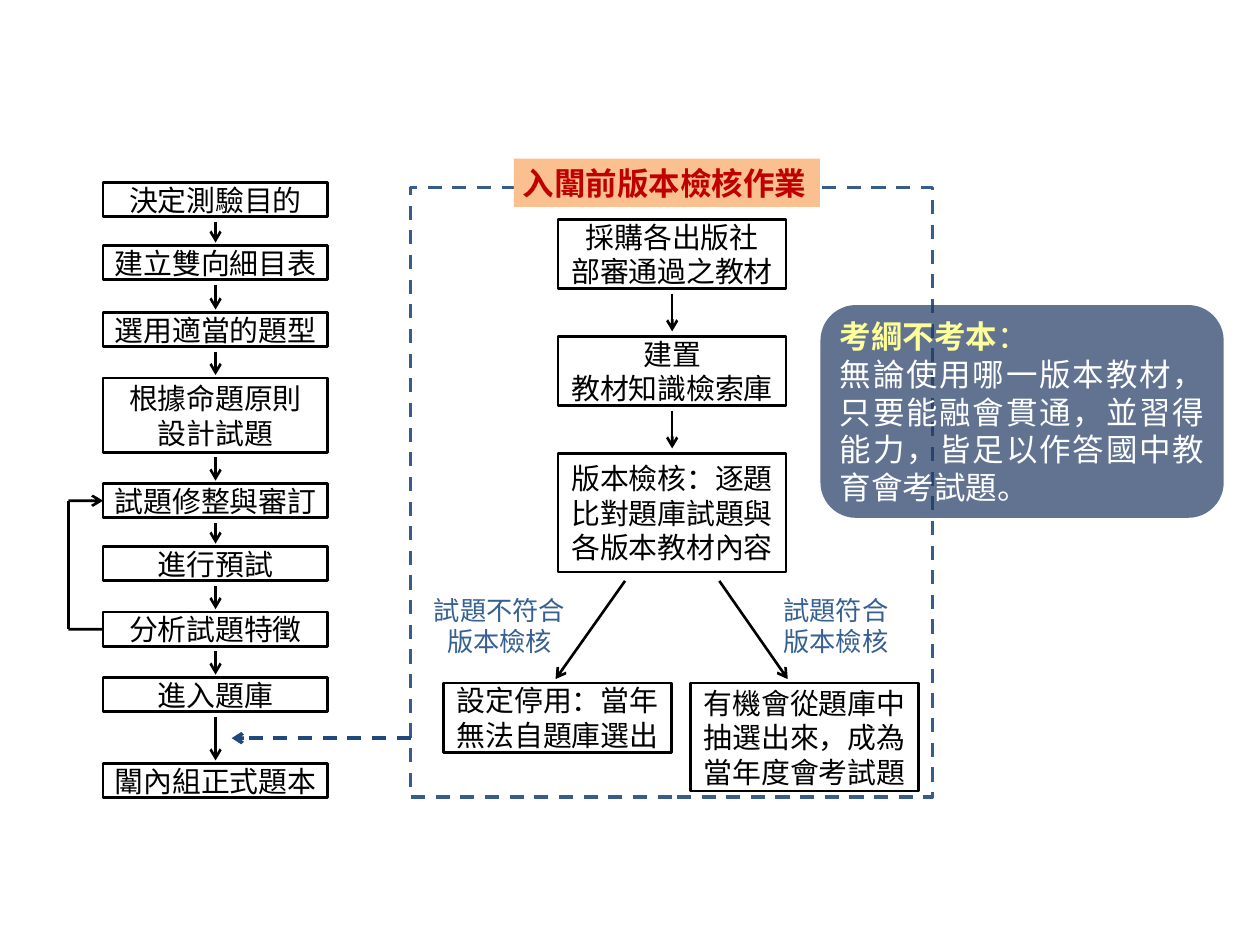
from lxml import etree
from pptx import Presentation
from pptx.dml.color import RGBColor
from pptx.enum.dml import MSO_LINE
from pptx.enum.shapes import MSO_CONNECTOR, MSO_SHAPE
from pptx.enum.text import MSO_ANCHOR, PP_ALIGN
from pptx.oxml.ns import qn
from pptx.util import Cm, Pt

FONT = "Noto Sans CJK SC"
BLACK = RGBColor(0x00, 0x00, 0x00)
WHITE = RGBColor(0xFF, 0xFF, 0xFF)
LABEL_BLUE = RGBColor(0x37, 0x60, 0x92)
FRAME_BLUE = RGBColor(0x38, 0x5D, 0x8A)
LINK_BLUE = RGBColor(0x1F, 0x49, 0x7D)
NAVY = RGBColor(0x20, 0x38, 0x64)
ORANGE = RGBColor(0xFA, 0xC0, 0x90)
RED = RGBColor(0xC0, 0x00, 0x00)
YELLOW = RGBColor(0xFF, 0xFF, 0x99)

RECTANGLE, ROUNDED = MSO_SHAPE.RECTANGLE, MSO_SHAPE.ROUNDED_RECTANGLE
STRAIGHT, DASH = MSO_CONNECTOR.STRAIGHT, MSO_LINE.DASH
MIDDLE = MSO_ANCHOR.MIDDLE
LEFT, CENTER, JUSTIFY = PP_ALIGN.LEFT, PP_ALIGN.CENTER, PP_ALIGN.JUSTIFY
LEFT_SIDE = 1

STEP_HEIGHT = 0.69
STEPS = [  # top within the column, height, lines
    (0, STEP_HEIGHT, ["決定測驗目的"]),
    (1.27, STEP_HEIGHT, ["建立雙向細目表"]),
    (2.62, STEP_HEIGHT, ["選用適當的題型"]),
    (3.94, 1.5, ["根據命題原則", "設計試題"]),
    (6.07, STEP_HEIGHT, ["試題修整與審訂"]),
    (7.34, STEP_HEIGHT, ["進行預試"]),
    (8.66, STEP_HEIGHT, ["分析試題特徵"]),
    (9.98, STEP_HEIGHT, ["進入題庫"]),
    (11.71, STEP_HEIGHT, ["闈內組正式題本"]),
]
REVISION, ANALYSIS = 4, 6  # steps joined by the feedback loop


def set_font(paragraph, size, color, bold=False):
    font = paragraph.font
    font.name, font.size, font.bold = FONT, Pt(size), bold
    font.color.rgb = color
    properties = paragraph._p.get_or_add_pPr().get_or_add_defRPr()
    etree.SubElement(properties, qn("a:ea"), typeface=FONT)


def write(shape, lines, size, color, align=CENTER, bold=False):
    frame = shape.text_frame
    frame.word_wrap = True
    frame.vertical_anchor = MIDDLE
    frame.margin_left = frame.margin_right = Cm(0.18)
    frame.margin_top = frame.margin_bottom = Cm(0.1)
    frame.text = "\n".join(lines)
    for paragraph in frame.paragraphs:
        paragraph.alignment = align
        set_font(paragraph, size, color, bold)
    return frame


def add_panel(shapes, kind, left, top, width, height, fill=None):
    panel = shapes.add_shape(kind, Cm(left), Cm(top), Cm(width), Cm(height))
    panel.shadow.inherit = False
    panel.line.fill.background()
    if fill is None:
        panel.fill.background()
    else:
        panel.fill.solid()
        panel.fill.fore_color.rgb = fill
    return panel


def add_step(shapes, left, top, width, height, lines):
    step = add_panel(shapes, RECTANGLE, left, top, width, height)
    step.line.color.rgb = BLACK
    step.line.width = Pt(1.5)
    write(step, lines, 16.5, BLACK)
    return step


def add_line(shapes, x1, y1, x2, y2, arrow=True, color=BLACK, width=1.5, dash=None):
    line = shapes.add_connector(STRAIGHT, Cm(x1), Cm(y1), Cm(x2), Cm(y2))
    line.line.color.rgb = color
    line.line.width = Pt(width)
    if dash is not None:
        line.line.dash_style = dash
    if arrow:
        etree.SubElement(line.line._get_or_add_ln(), qn("a:tailEnd"), type="arrow")
    etree.SubElement(line._element.spPr, qn("a:effectLst"))
    return line


def build_item_process(slide, left, top, width):
    shapes = slide.shapes.add_group_shape().shapes
    boxes = [add_step(shapes, left, top + y, width, height, lines)
             for y, height, lines in STEPS]

    # Arrows between successive steps
    center = left + width / 2
    for (y, height, _), (next_y, _, _) in zip(STEPS, STEPS[1:]):
        add_line(shapes, center, top + y + height + 0.1, center, top + next_y - 0.06)

    # Feedback loop from analysis back to revision
    loop_x = left - 0.7
    revision_y, analysis_y = (top + STEPS[i][0] + STEP_HEIGHT / 2
                              for i in (REVISION, ANALYSIS))
    exit_line = add_line(shapes, left, analysis_y, loop_x, analysis_y, arrow=False)
    exit_line.begin_connect(boxes[ANALYSIS], LEFT_SIDE)
    add_line(shapes, loop_x, analysis_y, loop_x, revision_y, arrow=False)
    return_line = add_line(shapes, loop_x, revision_y, left, revision_y)
    return_line.end_connect(boxes[REVISION], LEFT_SIDE)


def build_version_check(slide, left, top):
    shapes = slide.shapes.add_group_shape().shapes
    width = 4.6

    # Main sequence
    sequence = [
        (0.64, 1.4, ["採購各出版社", "部審通過之教材"]),
        (3, 1.4, ["建置", "教材知識檢索庫"]),
        (5.36, 2.39, ["版本檢核：逐題比對題庫試題與各版本教材內容"]),
    ]
    for y, height, lines in sequence:
        add_step(shapes, left + 2.97, top + y, width, height, lines)
    center = left + 2.97 + width / 2
    for (y, height, _), (next_y, _, _) in zip(sequence, sequence[1:]):
        add_line(shapes, center, top + y + height + 0.1, center, top + next_y - 0.1)

    # Two outcomes: box left, box height, result, arrow ends, label left, label
    outcomes = [
        (0.66, 1.4, "設定停用：當年無法自題庫選出", 4.32, 2.92, 0, "試題不符合"),
        (5.64, 2.18, "有機會從題庫中抽選出來，成為當年度會考試題",
         6.22, 7.6, 6.78, "試題符合"),
    ]
    for box_x, height, result, start_x, end_x, label_x, verdict in outcomes:
        add_step(shapes, left + box_x, top + 9.99, width, height, [result])
        add_line(shapes, left + start_x, top + 7.93, left + end_x, top + 9.91)
        label = shapes.add_textbox(Cm(left + label_x), Cm(top + 8.13), Cm(3.58), Cm(1.4))
        write(label, [verdict, "版本檢核"], 15, LABEL_BLUE)


def build_check_frame(slide, left, top, width, height):
    shapes = slide.shapes.add_group_shape().shapes
    outline = add_panel(shapes, RECTANGLE, left, top, width, height)
    outline.line.color.rgb = FRAME_BLUE
    outline.line.width = Pt(2)
    outline.line.dash_style = DASH

    heading = add_panel(shapes, RECTANGLE, left + 2.08, top - 0.58, 6.17, 0.97, ORANGE)
    write(heading, ["入闈前版本檢核作業"], 18, RED, LEFT, bold=True)

    # Link back to the item process
    add_line(shapes, left, top + 11.1, left - 3.61, top + 11.1,
             color=LINK_BLUE, width=2, dash=DASH)


def build_principle(slide, left, top, width, height):
    callout = add_panel(slide.shapes, ROUNDED, left, top, width, height, NAVY)
    fill_color = callout._element.spPr.find(qn("a:solidFill"))[0]
    etree.SubElement(fill_color, qn("a:alpha"), val="70000")
    frame = write(callout, [
        "考綱不考本",
        "無論使用哪一版本教材，只要能融會貫通，並習得能力，皆足以作答國中教育會考試題。",
    ], 18, WHITE, JUSTIFY)
    title = frame.paragraphs[0]
    title.font.color.rgb = YELLOW
    title.runs[0].font.bold = True
    colon = title.add_run()
    colon.text = "："


def main():
    prs = Presentation()
    prs.slide_width, prs.slide_height = Cm(25.4), Cm(19.05)
    slide = prs.slides.add_slide(prs.slide_layouts[6])
    build_item_process(slide, 2.08, 3.68, 4.53)
    build_version_check(slide, 8.28, 3.78)
    build_check_frame(slide, 8.28, 3.78, 10.52, 12.29)
    build_principle(slide, 16.54, 6.15, 8.13, 4.29)
    prs.save("out.pptx")


if __name__ == "__main__":
    main()
